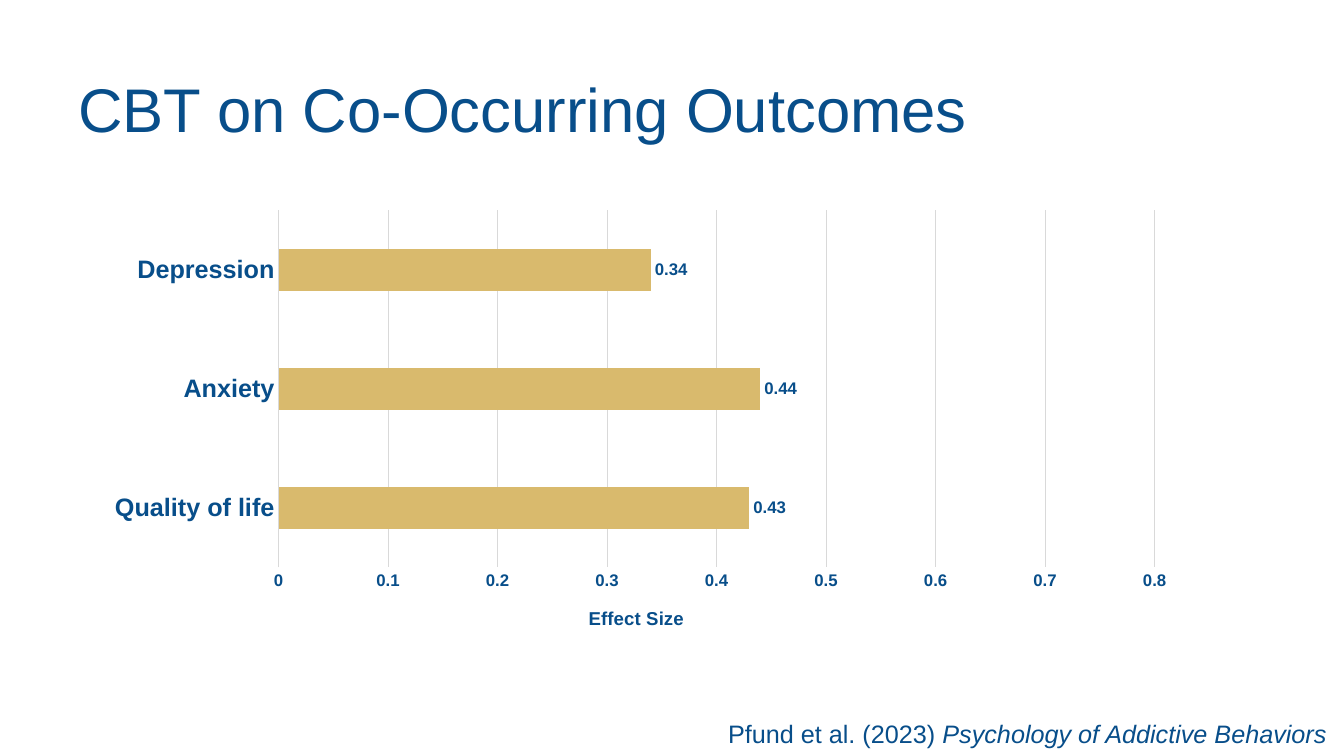
"""Build a slide with a bar chart of CBT effects on co-occurring outcomes."""
from dataclasses import dataclass

from lxml.etree import SubElement
from pptx import Presentation
from pptx.chart.data import CategoryChartData
from pptx.dml.color import RGBColor
from pptx.enum.chart import XL_CHART_TYPE, XL_LABEL_POSITION, XL_TICK_MARK
from pptx.enum.text import MSO_ANCHOR
from pptx.oxml import parse_xml
from pptx.oxml.ns import nsdecls, qn
from pptx.util import Emu, Pt

PX = 9525
FONT = "Arial"
NAVY = RGBColor(0x08, 0x4E, 0x8A)
GOLD = RGBColor(0xD9, 0xBA, 0x6D)
GRID = RGBColor(0xD9, 0xD9, 0xD9)
OUTCOMES = {"Quality of life": 0.43, "Anxiety": 0.44, "Depression": 0.34}


@dataclass(frozen=True)
class Frame:
    """A rectangle in px."""

    left: int
    top: int
    width: int
    height: int

    def emu(self):
        """Return the rectangle as EMU lengths."""
        return [Emu(n * PX) for n in (self.left, self.top, self.width, self.height)]


@dataclass(frozen=True)
class Span:
    """A stretch of text in one style."""

    text: str
    italic: bool = False


@dataclass(frozen=True)
class Label:
    """A one-paragraph text box."""

    frame: Frame
    size: int
    spans: tuple[Span, ...]
    anchor: MSO_ANCHOR = MSO_ANCHOR.TOP
    line_spacing: float = 1.0


CHART_FRAME = Frame(88, 192, 1043, 425)
LABELS = (
    Label(Frame(65, 38, 1085, 139), 44, (Span("CBT on Co-Occurring Outcomes"),),
          MSO_ANCHOR.MIDDLE, 0.9),
    Label(Frame(684, 679, 623, 38), 18,
          (Span("Pfund et al. (2023) "), Span("Psychology of Addictive Behaviors", True))),
)


def style_font(font, size: float, bold: bool = False) -> None:
    """Apply the slide's typeface and colour."""
    font.name = FONT
    font.size = Pt(size)
    font.bold = bold
    font.color.rgb = NAVY


def add_label(slide, label: Label) -> None:
    """Add a text box."""
    box = slide.shapes.add_textbox(*label.frame.emu())
    box.text_frame.word_wrap = True
    box.text_frame.vertical_anchor = label.anchor
    para = box.text_frame.paragraphs[0]
    para.line_spacing = label.line_spacing
    style_font(para.font, label.size)
    for span in label.spans:
        run = para.add_run()
        run.text = span.text
        if span.italic:
            run.font.italic = True


def place(element, index: int, inner: bool = False, **fractions: float) -> None:
    """Give a chart part a manual layout in fractions of the chart."""
    for old in element.findall(qn("c:layout")):
        element.remove(old)
    layout = parse_xml(f"<c:layout {nsdecls('c')}><c:manualLayout/></c:layout>")
    settings = {"layoutTarget": "inner"} if inner else {}
    settings |= {"xMode": "edge", "yMode": "edge"}
    settings |= {key: str(value) for key, value in fractions.items()}
    for tag, value in settings.items():
        SubElement(layout[0], qn(f"c:{tag}")).set("val", value)
    element.insert(index, layout)


def style_axes(chart) -> None:
    """Format both axes and the value axis title."""
    category, value = chart.category_axis, chart.value_axis
    for axis, size in ((category, 18), (value, 12)):
        axis.major_tick_mark = axis.minor_tick_mark = XL_TICK_MARK.NONE
        style_font(axis.tick_labels.font, size, bold=True)
    value.minimum_scale, value.maximum_scale, value.major_unit = 0, 0.8, 0.1
    value.format.line.fill.background()
    value.has_major_gridlines = True
    for line in (category.format.line, value.major_gridlines.format.line):
        line.color.rgb = GRID
        line.width = Pt(0.75)
    para = value.axis_title.text_frame.paragraphs[0]
    para.text = "Effect Size"
    style_font(para.font, 13.3, bold=True)
    place(value.axis_title._element, 1, x=0.45, y=0.9)


def add_effect_chart(slide) -> None:
    """Add the bar chart of effect sizes."""
    data = CategoryChartData()
    data.categories = list(OUTCOMES)
    data.add_series("Series 1", list(OUTCOMES.values()))
    chart = slide.shapes.add_chart(
        XL_CHART_TYPE.BAR_CLUSTERED, *CHART_FRAME.emu(), data).chart
    style_font(chart.font, 10)
    chart.has_legend = chart.has_title = False
    style_axes(chart)
    plot = chart.plots[0]
    plot.vary_by_categories = False
    plot.gap_width = 182
    fill = plot.series[0].format.fill
    fill.solid()
    fill.fore_color.rgb = GOLD
    plot.has_data_labels = True
    labels = plot.data_labels
    labels.show_value = True
    labels.position = XL_LABEL_POSITION.OUTSIDE_END
    style_font(labels.font, 12, bold=True)
    plot_area = chart._chartSpace.find(f".//{qn('c:plotArea')}")
    place(plot_area, 0, inner=True, x=0.17, y=0.02, w=0.8, h=0.8)


def main() -> None:
    """Build and save the deck."""
    deck = Presentation()
    deck.slide_width, deck.slide_height = Emu(1280 * PX), Emu(720 * PX)
    page = deck.slides.add_slide(deck.slide_layouts[6])
    for label in LABELS:
        add_label(page, label)
    add_effect_chart(page)
    deck.save("out.pptx")


if __name__ == "__main__":
    main()
